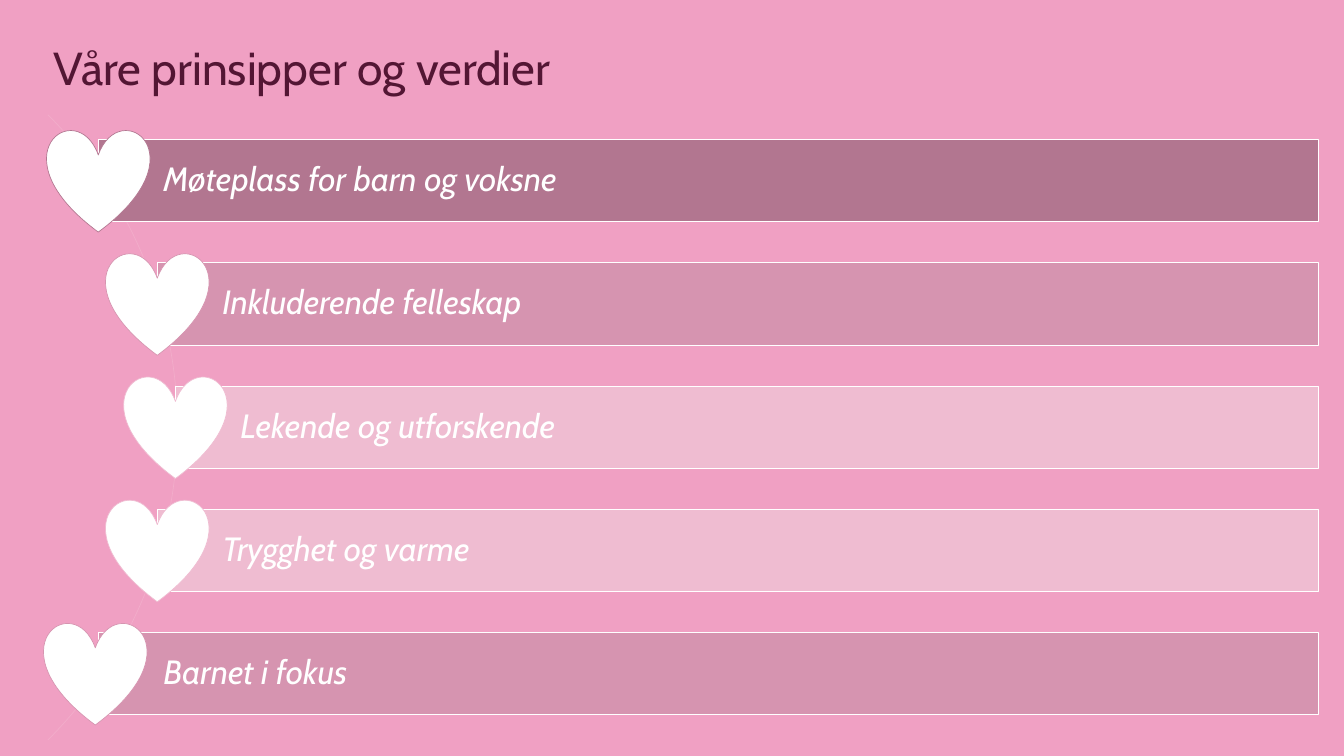
from dataclasses import dataclass

from pptx import Presentation
from pptx.dml.color import RGBColor
from pptx.enum.shapes import MSO_SHAPE
from pptx.enum.text import MSO_ANCHOR, MSO_AUTO_SIZE, PP_ALIGN
from pptx.util import Inches, Pt

RECTANGLE = MSO_SHAPE.RECTANGLE
HEART = MSO_SHAPE.HEART
BLOCK_ARC = MSO_SHAPE.BLOCK_ARC
TOP = MSO_ANCHOR.TOP
MIDDLE = MSO_ANCHOR.MIDDLE
LEFT = PP_ALIGN.LEFT
FIT_SHAPE = MSO_AUTO_SIZE.SHAPE_TO_FIT_TEXT


@dataclass(frozen=True)
class Theme:
    font: str = "Cabin"
    background: str = "F0A0C3"
    title: str = "531634"
    white: str = "FFFFFF"
    arc: str = "F2ADCA"
    dark: str = "B27690"
    medium: str = "D694B0"
    light: str = "EFBCD1"
    title_size: int = 66
    value_size: int = 48
    line_width: int = 1


THEME = Theme()

SLIDE_WIDTH, SLIDE_HEIGHT = 26.66, 15
BAR_RIGHT = 26.16
BAR_HEIGHT = 1.63
FIRST_BAR_TOP, LAST_BAR_TOP = 2.77, 12.55
HEART_SIZE = 2.04

VALUES = [
    ("Møteplass for barn og voksne", 1.95, 0.93, THEME.dark),
    ("Inkluderende felleskap", 3.12, 2.1, THEME.medium),
    ("Lekende og utforskende", 3.48, 2.46, THEME.light),
    ("Trygghet og varme", 3.12, 2.1, THEME.light),
    ("Barnet i fokus", 1.95, 0.87, THEME.medium),
]
BAR_PITCH = (LAST_BAR_TOP - FIRST_BAR_TOP) / (len(VALUES) - 1)


class SlideBuilder:
    def __init__(self, slide, theme):
        self.slide = slide
        self.theme = theme

    def background(self):
        fill = self.slide.background.fill
        fill.solid()
        fill.fore_color.rgb = RGBColor.from_string(self.theme.background)

    def set_text(self, shape, text, size, color, margins, anchor, italic=False):
        frame = shape.text_frame
        frame.word_wrap = True
        frame.vertical_anchor = anchor
        (frame.margin_left, frame.margin_top,
         frame.margin_right, frame.margin_bottom) = map(Inches, margins)
        frame.text = text
        paragraph = frame.paragraphs[0]
        paragraph.alignment = LEFT
        font = paragraph.font
        font.name = self.theme.font
        font.size = Pt(size)
        font.italic = italic
        font.color.rgb = RGBColor.from_string(color)
        return paragraph

    def title(self, text, left, top, width, height):
        title = self.slide.shapes.title
        title.left, title.top = Inches(left), Inches(top)
        title.width, title.height = Inches(width), Inches(height)
        self.set_text(title, text, self.theme.title_size, self.theme.title,
                      (0, 0, 0, 0), TOP)
        title.text_frame.auto_size = FIT_SHAPE

    def shape(self, kind, left, top, width, height, line, fill=None):
        shape = self.slide.shapes.add_shape(
            kind, Inches(left), Inches(top), Inches(width), Inches(height))
        shape.shadow.inherit = False
        shape.line.color.rgb = RGBColor.from_string(line)
        shape.line.width = Pt(self.theme.line_width)
        if fill:
            shape.fill.solid()
            shape.fill.fore_color.rgb = RGBColor.from_string(fill)
        else:
            shape.fill.background()
        return shape

    def arc(self, left, top, size):
        arc = self.shape(BLOCK_ARC, left, top, size, size, self.theme.arc)
        for index, adjustment in enumerate((189, 27, 0)):
            arc.adjustments[index] = adjustment

    def bar(self, text, left, top, color):
        bar = self.shape(RECTANGLE, left, top, BAR_RIGHT - left, BAR_HEIGHT,
                         self.theme.white, color)
        paragraph = self.set_text(bar, text, self.theme.value_size,
                                  self.theme.white, (1.29, 0.13, 0.13, 0.13),
                                  MIDDLE, italic=True)
        paragraph.line_spacing = 0.9

    def heart(self, left, bar_top, color):
        top = bar_top + (BAR_HEIGHT - HEART_SIZE) / 2
        self.shape(HEART, left, top, HEART_SIZE, HEART_SIZE, color,
                   self.theme.white)


def main():
    presentation = Presentation()
    presentation.slide_width = Inches(SLIDE_WIDTH)
    presentation.slide_height = Inches(SLIDE_HEIGHT)
    slide = presentation.slides.add_slide(presentation.slide_layouts[5])

    builder = SlideBuilder(slide, THEME)
    builder.background()
    builder.title("Våre prinsipper og verdier", 1.06, 0.77, 26.02, 1.11)
    builder.arc(-14.02, -0.29, 17.54)
    for index, (text, bar_left, heart_left, color) in enumerate(VALUES):
        top = FIRST_BAR_TOP + index * BAR_PITCH
        builder.bar(text, bar_left, top, color)
        builder.heart(heart_left, top, color)

    presentation.save("out.pptx")


if __name__ == "__main__":
    main()
